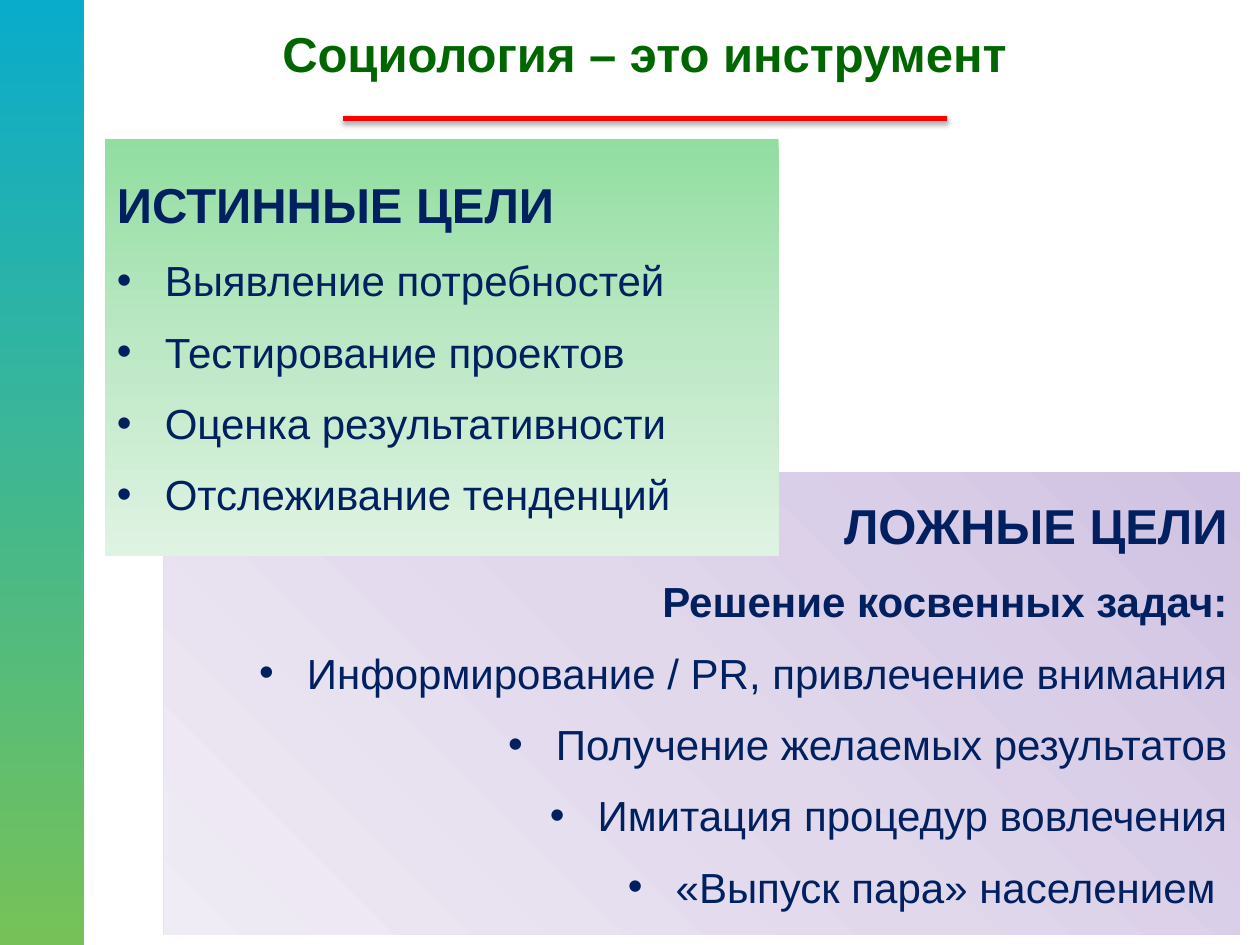
from copy import deepcopy

from pptx import Presentation
from pptx.dml.color import RGBColor
from pptx.enum.shapes import MSO_CONNECTOR as CONN, MSO_SHAPE as SHAPE
from pptx.enum.text import MSO_ANCHOR as ANCHOR, PP_ALIGN as ALIGN
from pptx.oxml import parse_xml
from pptx.oxml.ns import nsdecls, qn
from pptx.util import Inches, Pt

NAVY, GREEN, RED = "002060", "006600", "FF0000"
TRUE_GOALS = [
    "Выявление потребностей",
    "Тестирование проектов",
    "Оценка результативности",
    "Отслеживание тенденций",
]
FALSE_GOALS = [
    "Информирование / PR, привлечение внимания",
    "Получение желаемых результатов",
    "Имитация процедур вовлечения",
    "«Выпуск пара» населением ",
]


def rgb(color):
    return RGBColor.from_string(color)


def write(p, text, size=24, color=NAVY, bold=False, align=ALIGN.LEFT,
          before=12, bullet=False, level=0):
    p.alignment, p.level, p.space_before = align, level, Pt(before)
    r = p.add_run()
    r.text = text
    r.font.name, r.font.size, r.font.bold = "Arial", Pt(size), bold
    r.font.color.rgb = rgb(color)
    if bullet:
        pPr = p._p.get_or_add_pPr()
        pPr.set("marL", str(Inches(0.38 + 0.5 * level)))
        pPr.set("indent", str(Inches(-0.38)))
        pPr.append(parse_xml(f'<a:buFont {nsdecls("a")} typeface="Arial"/>'))
        pPr.append(parse_xml(f'<a:buChar {nsdecls("a")} char="•"/>'))


class SlideBuilder:
    """Holds the slide and draws its gradient panels, texts and rules."""

    def __init__(self, slide):
        self.s = slide

    def panel(self, x, y, w, h, colors, angle):
        sp = self.s.shapes.add_shape(
            SHAPE.RECTANGLE, Inches(x), Inches(y), Inches(w), Inches(h))
        sp.shadow.inherit = False
        sp.line.fill.background()
        sp.fill.gradient()
        sp.fill.gradient_angle = 360 - angle
        stops = sp._element.spPr.find(".//" + qn("a:gsLst"))
        for _ in colors[2:]:
            stops.append(deepcopy(stops[0]))
        for i, (stop, color) in enumerate(zip(sp.fill.gradient_stops, colors)):
            stop.position = i / (len(colors) - 1)
            stop.color.rgb = rgb(color)
        return sp

    def text(self, sp, lines):
        tf = sp.text_frame
        tf.word_wrap, tf.vertical_anchor = True, ANCHOR.MIDDLE
        for i, (text, style) in enumerate(lines):
            write(tf.add_paragraph() if i else tf.paragraphs[0], text, **style)

    def title(self, x, y, w, h, text):
        sp = self.s.shapes.add_textbox(Inches(x), Inches(y), Inches(w), Inches(h))
        style = dict(size=28, color=GREEN, bold=True, align=ALIGN.CENTER, before=0)
        self.text(sp, [(text, style)])

    def rule(self, x1, x2, y, color, width):
        ln = self.s.shapes.add_connector(
            CONN.STRAIGHT, Inches(x1), Inches(y), Inches(x2), Inches(y))
        ln.line.color.rgb, ln.line.width = rgb(color), Pt(width)
        ln._element.spPr.append(parse_xml(
            f'<a:effectLst {nsdecls("a")}><a:outerShdw blurRad="{Pt(3.1)}" '
            f'dist="{Pt(1.8)}" dir="5400000" rotWithShape="0">'
            '<a:srgbClr val="000000"><a:alpha val="35000"/></a:srgbClr>'
            '</a:outerShdw></a:effectLst>'))


def main():
    prs = Presentation()
    prs.slide_width, prs.slide_height = Inches(10), Inches(7.5)
    b = SlideBuilder(prs.slides.add_slide(prs.slide_layouts[6]))

    right = dict(align=ALIGN.RIGHT)
    false_panel = b.panel(1.3, 3.75, 8.54, 3.67, ["D0C2E2", "E1D8EC", "F0ECF5"], 135)
    b.text(false_panel, [
        ("ЛОЖНЫЕ ЦЕЛИ", dict(right, size=28, bold=True)),
        ("Решение косвенных задач:", dict(right, bold=True)),
        *((goal, dict(right, bullet=True, level=1)) for goal in FALSE_GOALS),
    ])
    true_panel = b.panel(0.83, 1.1, 5.35, 3.31, ["91DEA0", "BDE8C5", "DFF3E3"], 90)
    b.text(true_panel, [
        ("ИСТИННЫЕ ЦЕЛИ", dict(size=28, bold=True)),
        *((goal, dict(bullet=True)) for goal in TRUE_GOALS),
    ])
    b.title(1.14, 0.13, 7.95, 0.58, "Социология – это инструмент")
    b.panel(0, 0, 0.67, 7.5, ["09ACCB", "76C258"], 90)
    b.rule(2.72, 7.52, 0.94, RED, 3)
    prs.save("out.pptx")


if __name__ == "__main__":
    main()
